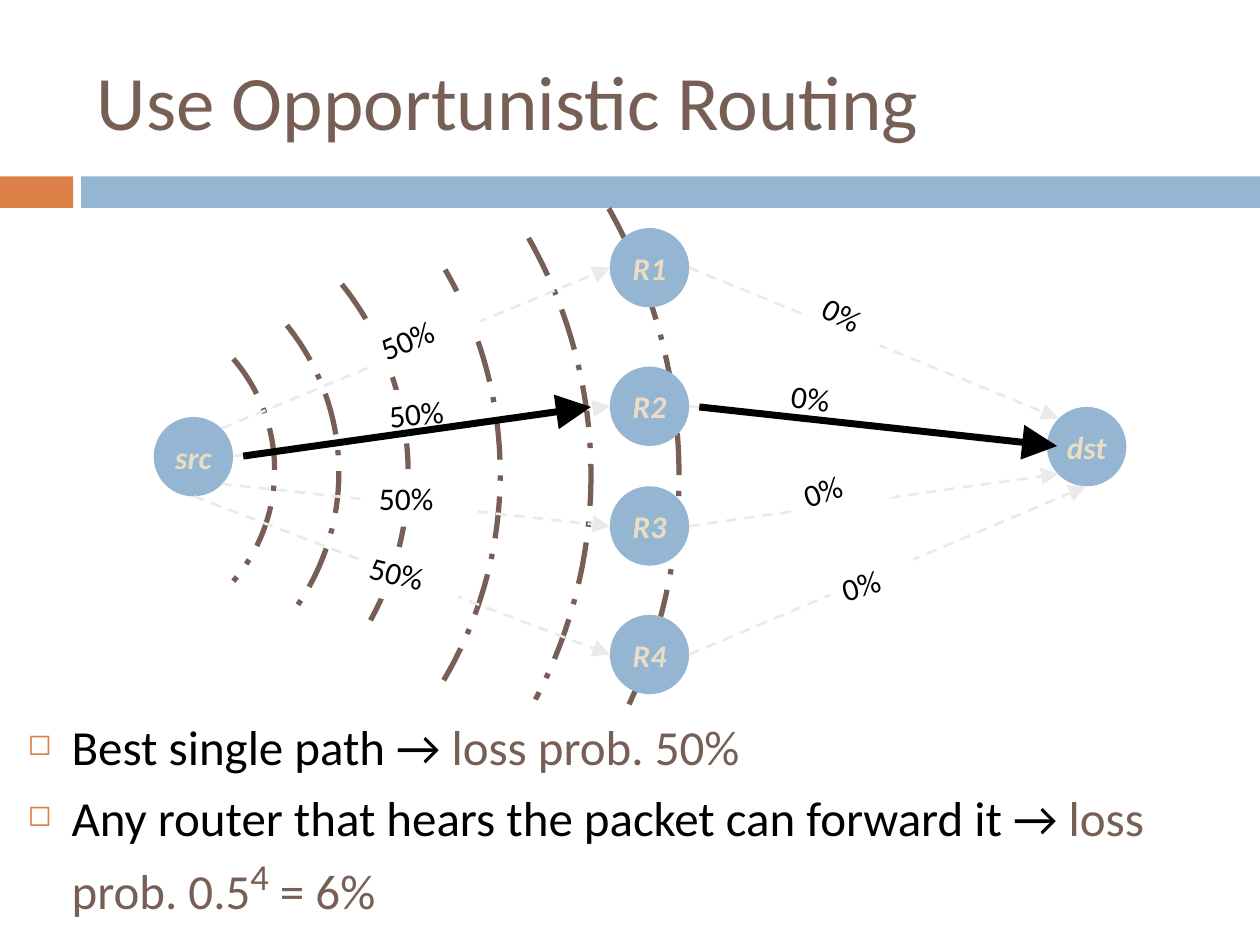
from math import cos, radians, sin
from lxml import etree
from pptx import Presentation, util as u
from pptx.dml.color import RGBColor
from pptx.enum import dml, shapes, text
from pptx.oxml.ns import nsdecls, qn

THEME = {
    "blue": "94B6D2", "orange": "DD8047", "brown": "775F55", "sand": "EBDDC3",
    "pale": "EAEAEA", "black": "000000", "white": "FFFFFF",
    "font": "Calibri", "title": 44, "body": 28, "power": 36, "label": 18,
}
COLS, ROWS = 100, 75  # square grid cells across and down the slide

prs = Presentation()
prs.slide_width, prs.slide_height = u.Inches(10), u.Inches(7.5)
CELL = prs.slide_width // COLS
s = prs.slides.add_slide(prs.slide_layouts[6])


def add_box(at, kind=None, fill=None, rotation=0, **frame):
    """Add a preset shape, or a text box without a kind; at is in grid cells."""
    at = [round(v * CELL) for v in at]
    if kind is None:
        sp = s.shapes.add_textbox(*at)
    else:
        sp = s.shapes.add_shape(kind, *at)
        sp.shadow.inherit = False
        sp.line.fill.background()
        sp.fill.solid()
        sp.fill.fore_color.rgb = RGBColor.from_string(THEME[fill])
    sp.rotation = rotation
    tf = sp.text_frame
    for name, value in {"word_wrap": True, **frame}.items():
        setattr(tf, name, value)
    return tf


def add_run(p, words, size, color, **style):
    r = p.add_run()
    r.text = words
    style = {"name": THEME["font"], "size": u.Pt(THEME[size]), **style}
    for name, value in style.items():
        setattr(r.font, name, value)
    r.font.color.rgb = RGBColor.from_string(THEME[color])
    return r


RECT, OVAL = shapes.MSO_SHAPE.RECTANGLE, shapes.MSO_SHAPE.OVAL
MIDDLE = text.MSO_ANCHOR.MIDDLE

# Header band and title
add_box((0, 14, 5.8, 2.5), RECT, "orange")
add_box((6.45, 14, COLS - 6.45, 2.5), RECT, "blue")
tf = add_box((6.7, 2.5, 89.2, 10.8), vertical_anchor=MIDDLE)
add_run(tf.paragraphs[0], "Use Opportunistic Routing", "title", "brown")

# Conclusions
tf = add_box((1.2, 56.4, 97.5, 15.3))
bullets = [
    [("Best single path → ", "body", "black"), ("loss prob. 50%", "body", "brown")],
    [("Any router that hears the packet can forward it → ", "body", "black"),
     ("loss prob. 0.5", "body", "brown"), ("4", "power", "brown"),
     (" = 6%", "body", "brown")],
]
for i, runs in enumerate(bullets):
    p = tf.add_paragraph() if i else tf.paragraphs[0]
    p.space_before = u.Pt(7)
    pPr = p._p.get_or_add_pPr()
    pPr.set("marL", str(u.Inches(0.35)))
    pPr.set("indent", str(-u.Inches(0.35)))
    color = etree.SubElement(pPr, qn("a:buClr"))
    etree.SubElement(color, qn("a:srgbClr"), val=THEME["orange"])
    etree.SubElement(pPr, qn("a:buSzPct"), val="60000")
    etree.SubElement(pPr, qn("a:buChar"), char="◻")
    for words, size, color in runs:
        r = add_run(p, words, size, color)
        if size == "power":
            r._r.get_or_add_rPr().set("baseline", "30000")

# Radio waves: centre x, centre y, radius, first and last angle
waves = [
    (8.3, 37.3, 13.5, -40.8, 40.8), (8.3, 37.5, 18.6, -38.9, 35.8),
    (8.3, 37.6, 24.1, -38.6, 31.5), (7.5, 37.6, 32.2, -30.2, 30.6),
    (8.7, 37.7, 38.2, -29.5, 27.8), (10.6, 37.8, 43.3, -29.4, 25.9),
]
for cx, cy, radius, first, last in waves:
    rim = [(cx + radius * cos(radians(a)), cy + radius * sin(radians(a)))
           for a in (first, 0, last)]
    corners = [(round(x * CELL), round(y * CELL)) for x, y in [*rim, (cx, cy)]]
    outline = s.shapes.build_freeform(*corners[0])
    outline.add_line_segments(corners[1:])
    sp = outline.convert_to_shape()

    # The sector's rim is a stroked arc; its straight sides carry no line
    start, _, _, centre = [(x - sp.left, y - sp.top) for x, y in corners]
    reach = round(radius * CELL)
    arc = (f'<a:moveTo><a:pt x="{start[0]}" y="{start[1]}"/></a:moveTo>'
           f'<a:arcTo wR="{reach}" hR="{reach}" stAng="{round(first % 360 * 60000)}"'
           f' swAng="{round((last - first) * 60000)}"/>')
    sides = f'<a:lnTo><a:pt x="{centre[0]}" y="{centre[1]}"/></a:lnTo><a:close/>'
    paths = sp._element.spPr.find(".//" + qn("a:pathLst"))
    paths.clear()
    for kind, body in (('fill="none"', arc), ('stroke="0"', arc + sides)):
        paths.append(etree.fromstring(
            f'<a:path {nsdecls("a")} w="{sp.width}" h="{sp.height}" {kind}>'
            f'{body}</a:path>'))
    sp.shadow.inherit = False
    sp.fill.background()
    sp.line.color.rgb = RGBColor.from_string(THEME["brown"])
    sp.line.width = u.Pt(3)
    sp.line.dash_style = dml.MSO_LINE.LONG_DASH_DOT

# Network nodes
NODE = 6.3
nodes = {"src": (12.2, 33.1), "R1": (48.4, 18.1), "R2": (48.4, 29.1),
         "R3": (48.4, 38.6), "R4": (48.4, 48.8), "dst": (83.1, 32.3)}
for name, (x, y) in nodes.items():
    tf = add_box((x, y, NODE, NODE), OVAL, "blue",
                 word_wrap=False, vertical_anchor=MIDDLE)
    p = tf.paragraphs[0]
    p.alignment = text.PP_ALIGN.CENTER
    add_run(p, name, "label", "sand", bold=True, italic=True)

# Each router has a link in from src and a link out to dst
ports = {"R1": ((17.6, 34), (84, 33.2)), "R2": ((18.5, 36.2), (83.1, 35.4)),
         "R3": ((17.6, 38.4), (84, 37.6)), "R4": ((15.4, 39.4), (86.2, 38.6))}
faint = {"color": "pale", "width": 1.5, "dash": dml.MSO_LINE.DASH}
strong = {"color": "black", "width": 4, "dash": None}
links = []
for router, (leave, arrive) in ports.items():
    x, y = nodes[router]
    y += NODE / 2
    links += [(leave, (x, y), faint), ((x + NODE, y), arrive, faint)]
best_path = [((19.3, 36.2), (46.9, 32.3), strong),
             ((55.5, 32.3), (83.9, 35.4), strong)]

# Loss labels: left, top, width, rotation
LABEL_HEIGHT = 4.3
labels = {
    "50%": [(29.1, 24.4, 9.1, 337.3), (29.9, 30.7, 8.3, 354),
            (29.1, 37.5, 8.3, 0), (28.3, 43.7, 8.3, 14.3)],
    "0%": [(64.2, 23.2, 6.3, 27.7), (61.8, 29.7, 7.1, 7.7),
           (62.7, 36.2, 9.4, 341.1), (65.8, 44.1, 7.1, 343.5)],
}

# Labels cover the faint links; the best path lies on top
for layer in (links, best_path):
    for start, end, look in layer:
        line = s.shapes.add_connector(
            shapes.MSO_CONNECTOR.STRAIGHT,
            *[round(v * CELL) for v in (*start, *end)])
        line.line.color.rgb = RGBColor.from_string(THEME[look["color"]])
        line.line.width = u.Pt(look["width"])
        line.line.dash_style = look["dash"]
        etree.SubElement(line.line._get_or_add_ln(), qn("a:tailEnd"),
                         type="triangle", w="lg", len="lg")
        etree.SubElement(line._element.spPr, qn("a:effectLst"))
    if layer is links:
        for words, places in labels.items():
            for x, y, width, turn in places:
                tf = add_box((x, y, width, LABEL_HEIGHT), RECT, "white", turn,
                             vertical_anchor=text.MSO_ANCHOR.TOP)
                p = tf.paragraphs[0]
                p.alignment = text.PP_ALIGN.LEFT
                add_run(p, words, "label", "black")

prs.save("out.pptx")
